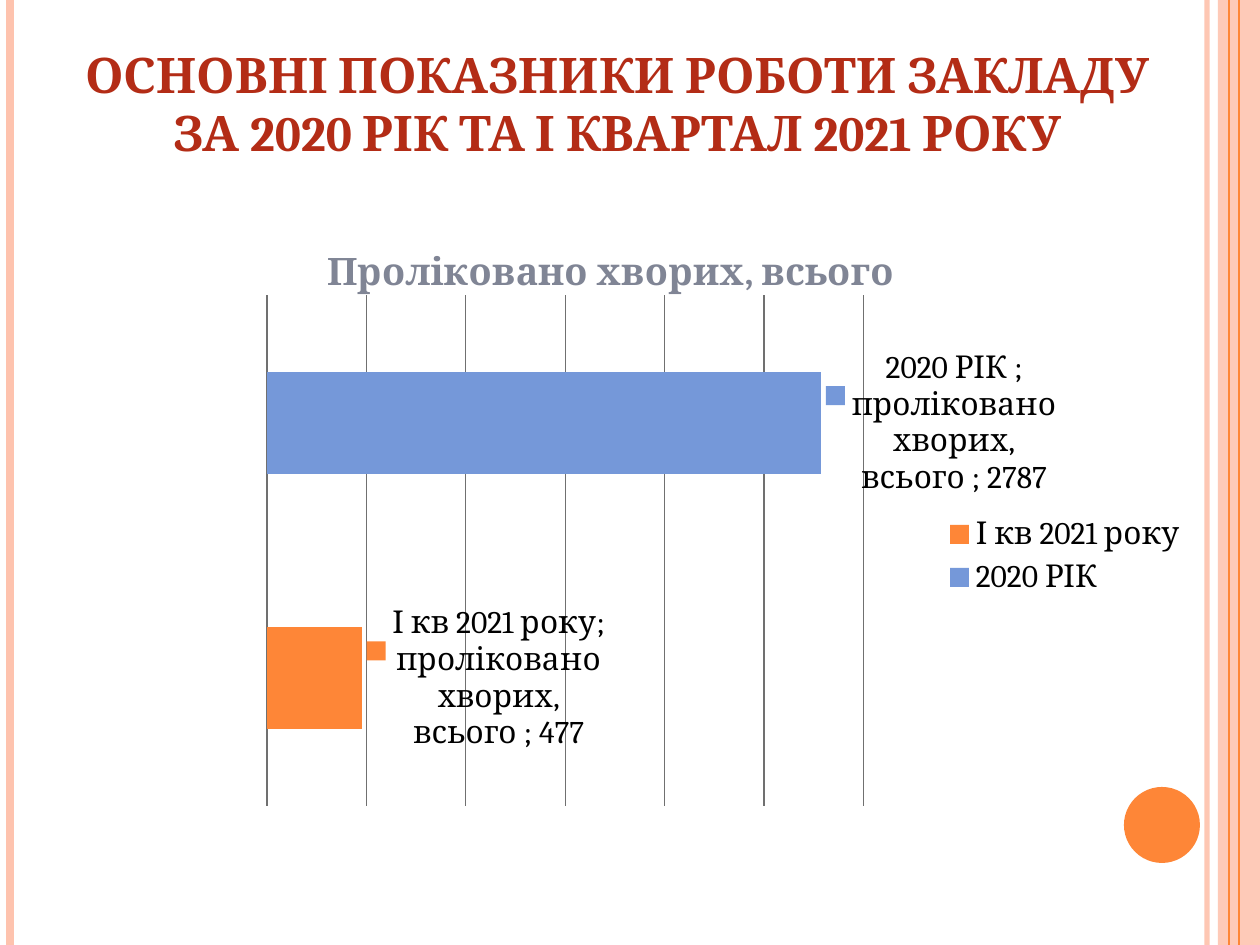
from lxml.etree import SubElement
from pptx import Presentation
from pptx.chart.data import CategoryChartData
from pptx.dml.color import RGBColor
from pptx.enum.chart import XL_CHART_TYPE, XL_LABEL_POSITION, XL_LEGEND_POSITION
from pptx.enum.shapes import MSO_CONNECTOR, MSO_SHAPE
from pptx.enum.text import MSO_ANCHOR, MSO_AUTO_SIZE, PP_ALIGN
from pptx.oxml import parse_xml
from pptx.oxml.ns import nsdecls, qn
from pptx.util import Emu, Pt

SCALE = 914400 / 126
PAGE_WIDTH, PAGE_HEIGHT = 1260, 945
FONT = "Cambria"
PEACH = RGBColor(0xFE, 0xC3, 0xAE)
ORANGE = RGBColor(0xFE, 0x86, 0x37)
BLUE = RGBColor(0x75, 0x98, 0xD9)
RED = RGBColor(0xB3, 0x2C, 0x16)
GREY = RGBColor(0x80, 0x85, 0x95)
GRID = RGBColor(0x70, 0x70, 0x70)
BLACK = RGBColor(0, 0, 0)

STRIPES = [
    (1207, PEACH, 3, 93),
    (10, PEACH, 4.5, 100),
    (1239, ORANGE, 1.5, 100),
    (1229, ORANGE, 0.75, 100),
]
PLOT_LAYOUT = {"x": 0.203, "y": 0.112, "w": 0.509, "h": 0.76}


def px(length):
    """Turn pixels into EMU."""
    return Emu(round(length * SCALE))


def apply_format(target, values):
    """Set every attribute named in a dict of format values."""
    for name, value in values.items():
        setattr(target, name, value)


def format_font(font, size, color, bold=False):
    """Give a font the deck typeface, a size and a colour."""
    apply_format(font, {"name": FONT, "size": Pt(size), "bold": bold})
    font.color.rgb = color


def set_opacity(element, percent):
    """Make the first solid colour inside an element partly transparent."""
    color = next(element.iter(qn("a:srgbClr")))
    SubElement(color, qn("a:alpha")).set("val", str(percent * 1000))


def add_stripe(page, left, color, weight, opacity):
    """Draw a vertical line over the full height of the page."""
    line = page.shapes.add_connector(
        MSO_CONNECTOR.STRAIGHT, px(left), 0, px(left), px(PAGE_HEIGHT))
    line.line.color.rgb = color
    line.line.width = Pt(weight)
    if opacity < 100:
        set_opacity(line.line._get_or_add_ln(), opacity)
    SubElement(line._element.spPr, qn("a:effectLst"))


def add_filled(page, kind, bounds, color):
    """Add a preset shape with a plain fill and no line."""
    shape = page.shapes.add_shape(kind, *map(px, bounds))
    shape.shadow.inherit = False
    shape.fill.solid()
    shape.fill.fore_color.rgb = color
    shape.line.fill.background()
    return shape


def set_title(page, text):
    """Place and format the title placeholder."""
    box = page.shapes.title
    apply_format(box, {"left": px(63), "top": px(38),
                       "width": px(1109), "height": px(130)})
    apply_format(box.text_frame, {
        "text": text, "word_wrap": True,
        "auto_size": MSO_AUTO_SIZE.NONE, "vertical_anchor": MSO_ANCHOR.BOTTOM})
    para = box.text_frame.paragraphs[0]
    para.alignment = PP_ALIGN.CENTER
    format_font(para.runs[0].font, 28, RED, True)


def set_plot_layout(chart):
    """Fix the inner plot area as fractions of the chart."""
    area = chart._chartSpace.chart.plotArea
    for old in area.findall(qn("c:layout")):
        area.remove(old)
    places = "".join(f'<c:{key} val="{value}"/>' for key, value in PLOT_LAYOUT.items())
    area.insert(0, parse_xml(
        f'<c:layout {nsdecls("c")}><c:manualLayout><c:layoutTarget val="inner"/>'
        f'<c:xMode val="edge"/><c:yMode val="edge"/>{places}'
        '</c:manualLayout></c:layout>'))


def format_chart_title(chart, text):
    """Write the chart title and let it overlay the plot."""
    frame = chart.chart_title.text_frame
    frame.text = text
    format_font(frame.paragraphs[0].runs[0].font, 21.6, GREY, True)
    title = chart.chart_title._element
    overlay = title.find(qn("c:overlay"))
    if overlay is None:
        overlay = parse_xml(f'<c:overlay {nsdecls("c")}/>')
        previous = title.find(qn("c:layout"))
        if previous is None:
            previous = title.find(qn("c:tx"))
        previous.addnext(overlay)
    overlay.set("val", "1")


def format_labels(series):
    """Show key, category, series and value beside each bar."""
    labels = series.data_labels
    apply_format(labels, {
        "show_legend_key": True, "show_value": True,
        "show_category_name": True, "show_series_name": True,
        "position": XL_LABEL_POSITION.OUTSIDE_END})
    format_font(labels.font, 18, BLACK)
    separator = parse_xml(f'<c:separator {nsdecls("c")}>; </c:separator>')
    labels._element.find(qn("c:showBubbleSize")).addnext(separator)


def add_patient_chart(page):
    """Add the bar chart of treated patients."""
    data = CategoryChartData()
    data.categories = ["І кв 2021 року", "2020 РІК "]
    data.add_series("проліковано хворих, всього ", [477, 2787])
    chart = page.shapes.add_chart(
        XL_CHART_TYPE.BAR_CLUSTERED, *map(px, (29, 220, 1172, 672)), data).chart
    format_font(chart.font, 18, BLACK)
    format_chart_title(chart, "Проліковано хворих, всього ")
    set_plot_layout(chart)
    chart.has_legend = True
    apply_format(chart.legend, {"position": XL_LEGEND_POSITION.RIGHT,
                                "include_in_layout": True})
    format_font(chart.legend.font, 18, BLACK)
    chart.category_axis.visible = False
    apply_format(chart.value_axis, {
        "visible": False, "has_major_gridlines": True,
        "minimum_scale": 0, "maximum_scale": 3000, "major_unit": 500})
    grid = chart.value_axis.major_gridlines.format.line
    grid.color.rgb = GRID
    grid.width = Pt(0.75)
    plot = chart.plots[0]
    apply_format(plot, {"gap_width": 150, "vary_by_categories": True})
    series = plot.series[0]
    for index, color in enumerate((ORANGE, BLUE)):
        fill = series.points[index].format.fill
        fill.solid()
        fill.fore_color.rgb = color
    format_labels(series)


def main():
    """Build the slide and save the deck."""
    deck = Presentation()
    apply_format(deck, {"slide_width": px(PAGE_WIDTH), "slide_height": px(PAGE_HEIGHT)})
    page = deck.slides.add_slide(deck.slide_layouts[5])
    band = add_filled(page, MSO_SHAPE.RECTANGLE, (1218, 0, 42, PAGE_HEIGHT), PEACH)
    set_opacity(band._element.spPr, 87)
    for stripe in STRIPES:
        add_stripe(page, *stripe)
    add_filled(page, MSO_SHAPE.OVAL, (1124, 787, 76, 76), ORANGE)
    set_title(page, "ОСНОВНІ ПОКАЗНИКИ РОБОТИ ЗАКЛАДУ ЗА 2020 РІК ТА І КВАРТАЛ 2021 РОКУ")
    add_patient_chart(page)
    deck.save("out.pptx")


if __name__ == "__main__":
    main()
